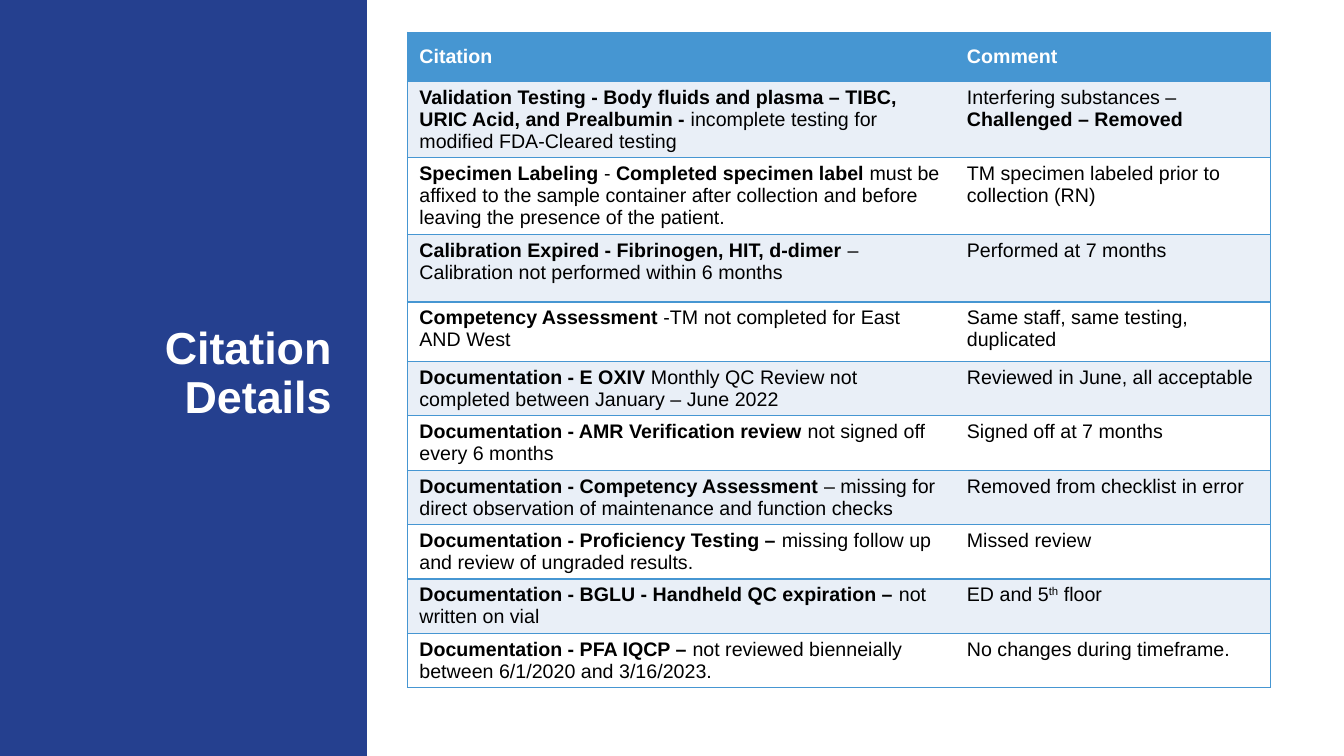
from lxml import etree
from pptx import Presentation
from pptx.dml.color import RGBColor
from pptx.enum import shapes, text
from pptx.oxml.ns import qn
from pptx.util import Emu, Inches, Pt

WIDTH, HEIGHT = Inches(13.33), Inches(7.5)
COLORS = {"panel": "25408F", "accent": "4696D2", "band": "E9EFF7",
          "white": "FFFFFF", "black": "000000"}
COL_WIDTHS = [5.43, 3.13]
ROW_HEIGHTS = [0.49, 0.75, 0.76, 0.67, 0.59] + [0.54] * 6
HEADER = ("*Citation*", "*Comment*")
CITATIONS = [
    ("*Validation Testing - Body fluids and plasma – TIBC, URIC Acid, and Prealbumin - *"
     "incomplete testing for modified FDA-Cleared testing",
     "Interfering substances – *Challenged – Removed*"),
    ("*Specimen Labeling *- *Completed specimen label *must be affixed to the sample "
     "container after collection and before leaving the presence of the patient.",
     "TM specimen labeled prior to collection (RN)"),
    ("*Calibration Expired - Fibrinogen, HIT, d-dimer *– Calibration not performed "
     "within 6 months", "Performed at 7 months"),
    ("*Competency Assessment *-TM not completed for East AND West",
     "Same staff, same testing, duplicated"),
    ("*Documentation - E OXIV* Monthly QC Review not completed between "
     "January – June 2022", "Reviewed in June, all acceptable"),
    ("*Documentation - AMR Verification review* not signed off every 6 months",
     "Signed off at 7 months"),
    ("*Documentation - Competency Assessment *– missing for direct observation of "
     "maintenance and function checks", "Removed from checklist in error"),
    ("*Documentation - Proficiency Testing – *missing follow up and review of "
     "ungraded results.", "Missed review"),
    ("*Documentation - BGLU - Handheld QC expiration – *not written on vial",
     "ED and 5^th^ floor"),
    ("*Documentation - PFA IQCP – *not reviewed bienneially between 6/1/2020 and "
     "3/16/2023.", "No changes during timeframe."),
]


def rgb(name):
    """Return the named colour."""
    return RGBColor.from_string(COLORS[name])


def write_text(tf, content, size=14, color="black", align=None, spacing=None):
    """Write one paragraph, with *bold* and ^superscript^ marks."""
    p = tf.paragraphs[0]
    p.alignment, p.line_spacing = align, spacing
    for i, chunk in enumerate(content.split("*")):
        for j, piece in enumerate(chunk.split("^")):
            if not piece:
                continue
            r = p.add_run()
            r.text = piece
            r.font.name, r.font.size = "Arial", Pt(size)
            r.font.bold = i % 2 == 1
            r.font.color.rgb = rgb(color)
            if j % 2:
                r.font._element.set("baseline", "30000")


def set_borders(cell, visible):
    """Draw the visible sides of a cell and hide the others."""
    tc_pr = cell._tc.get_or_add_tcPr()
    for side in "LRTB":
        ln = etree.SubElement(tc_pr, qn(f"a:ln{side}"), w=str(Pt(1)))
        if side in visible:
            fill = etree.SubElement(ln, qn("a:solidFill"))
            etree.SubElement(fill, qn("a:srgbClr"), val=COLORS["accent"])
        else:
            etree.SubElement(ln, qn("a:noFill"))


def add_panel(slide, width):
    """Add the full-height side panel behind everything else."""
    sp = slide.shapes.add_shape(shapes.MSO_SHAPE.RECTANGLE, 0, 0, width, HEIGHT)
    sp.shadow.inherit = False
    sp.fill.solid()
    sp.fill.fore_color.rgb = rgb("panel")
    sp.line.fill.background()
    slide.shapes._spTree.insert(2, sp._element)


def add_title(slide, content):
    """Place and format the title on the panel."""
    sp = slide.shapes.title
    sp.left, sp.top, sp.width, sp.height = map(Inches, (0.25, 2.99, 3.14, 1.45))
    tf = sp.text_frame
    tf.word_wrap, tf.auto_size = True, text.MSO_AUTO_SIZE.NONE
    tf.vertical_anchor = text.MSO_ANCHOR.MIDDLE
    write_text(tf, f"*{content}*", size=32, color="white",
               align=text.PP_ALIGN.RIGHT, spacing=0.9)


def fill_cell(cell, content, row, col):
    """Format one table cell by its row and column."""
    set_borders(cell, "LTB" if col == 0 else "RTB")
    cell.fill.solid()
    cell.fill.fore_color.rgb = rgb("accent" if row == 0 else "band" if row % 2 else "white")
    cell.margin_left = cell.margin_right = Inches(0.12)
    cell.margin_top = cell.margin_bottom = Inches(0.05)
    cell.vertical_anchor = text.MSO_ANCHOR.TOP if row else text.MSO_ANCHOR.MIDDLE
    write_text(cell.text_frame, content, color="black" if row else "white")


def add_citation_table(slide, left, top):
    """Add the table of citations and comments."""
    rows = [HEADER] + CITATIONS
    table = slide.shapes.add_table(
        len(rows), len(COL_WIDTHS), left, top,
        Inches(sum(COL_WIDTHS)), Inches(sum(ROW_HEIGHTS))).table
    for column, width in zip(table.columns, COL_WIDTHS):
        column.width = Inches(width)
    for i, (height, contents) in enumerate(zip(ROW_HEIGHTS, rows)):
        table.rows[i].height = Inches(height)
        for j, content in enumerate(contents):
            fill_cell(table.cell(i, j), content, i, j)


def main():
    """Build the slide and save it."""
    prs = Presentation()
    prs.slide_width, prs.slide_height = WIDTH, HEIGHT
    slide = prs.slides.add_slide(prs.slide_layouts[5])
    add_panel(slide, Emu(int(WIDTH * 0.273)))
    add_title(slide, "Citation Details")
    add_citation_table(slide, Inches(4.04), Inches(0.32))
    prs.save("out.pptx")


if __name__ == "__main__":
    main()
